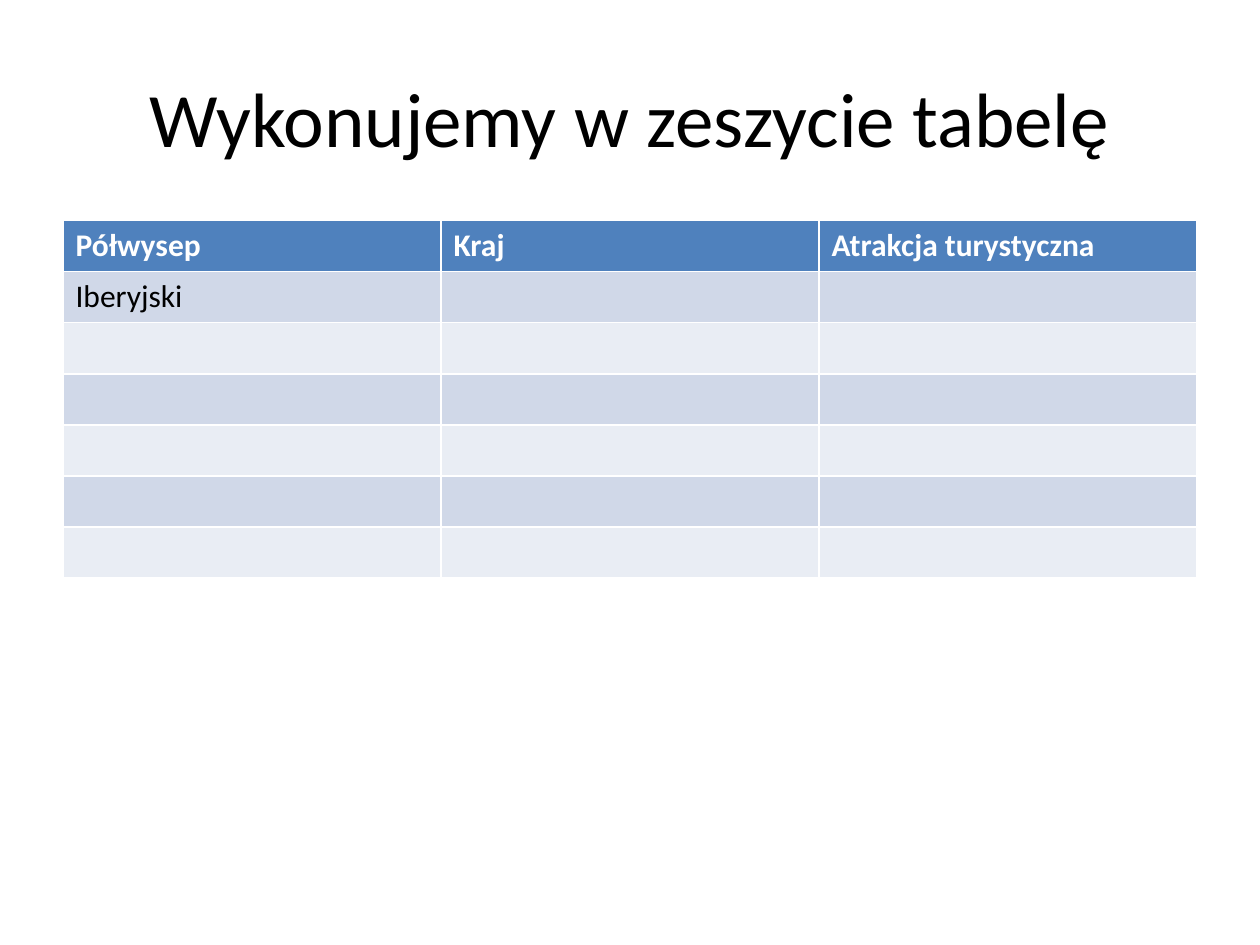
from pptx import Presentation
from pptx.dml.color import RGBColor
from pptx.enum.text import MSO_ANCHOR, PP_ALIGN
from pptx.util import Pt

MIDDLE = MSO_ANCHOR.MIDDLE
CENTER = PP_ALIGN.CENTER

# Content
TITLE = "Wykonujemy w zeszycie tabelę"
HEADERS = ["Półwysep", "Kraj", "Atrakcja turystyczna"]
PENINSULAS = ["Iberyjski", "", "", "", "", ""]

FONT = "Calibri"
COLORS = {"text": "000000", "header_text": "FFFFFF", "header": "4F81BD",
          "odd": "D0D8E8", "even": "E9EDF4"}
LEFT, WIDTH = 36, 648
TABLE_TOP, ROW_HEIGHT = 126, 29.2


def rgb(name):
    return RGBColor.from_string(COLORS[name])


def style(p, size, color, bold=False):
    p.font.name = FONT
    p.font.size = Pt(size)
    p.font.bold = bold
    p.font.color.rgb = rgb(color)


prs = Presentation()
prs.slide_width, prs.slide_height = Pt(720), Pt(540)
s = prs.slides.add_slide(prs.slide_layouts[6])

# Title
sp = s.shapes.add_textbox(Pt(LEFT), Pt(21.6), Pt(WIDTH), Pt(90))
tf = sp.text_frame
tf.word_wrap = True
tf.vertical_anchor = MIDDLE
p = tf.paragraphs[0]
p.text = TITLE
p.alignment = CENTER
style(p, 44, "text")

# Table: the default style supplies the white borders
rows = [HEADERS] + [[name, "", ""] for name in PENINSULAS]
table = s.shapes.add_table(len(rows), len(HEADERS), Pt(LEFT), Pt(TABLE_TOP),
                           Pt(WIDTH), Pt(ROW_HEIGHT * len(rows))).table
for i, row in enumerate(rows):
    table.rows[i].height = Pt(ROW_HEIGHT)
    header = i == 0
    fill = "header" if header else "odd" if i % 2 else "even"
    for j, text in enumerate(row):
        cell = table.cell(i, j)
        cell.fill.solid()
        cell.fill.fore_color.rgb = rgb(fill)
        p = cell.text_frame.paragraphs[0]
        if text:
            p.text = text
        style(p, 18, "header_text" if header else "text", header)

prs.save("out.pptx")
